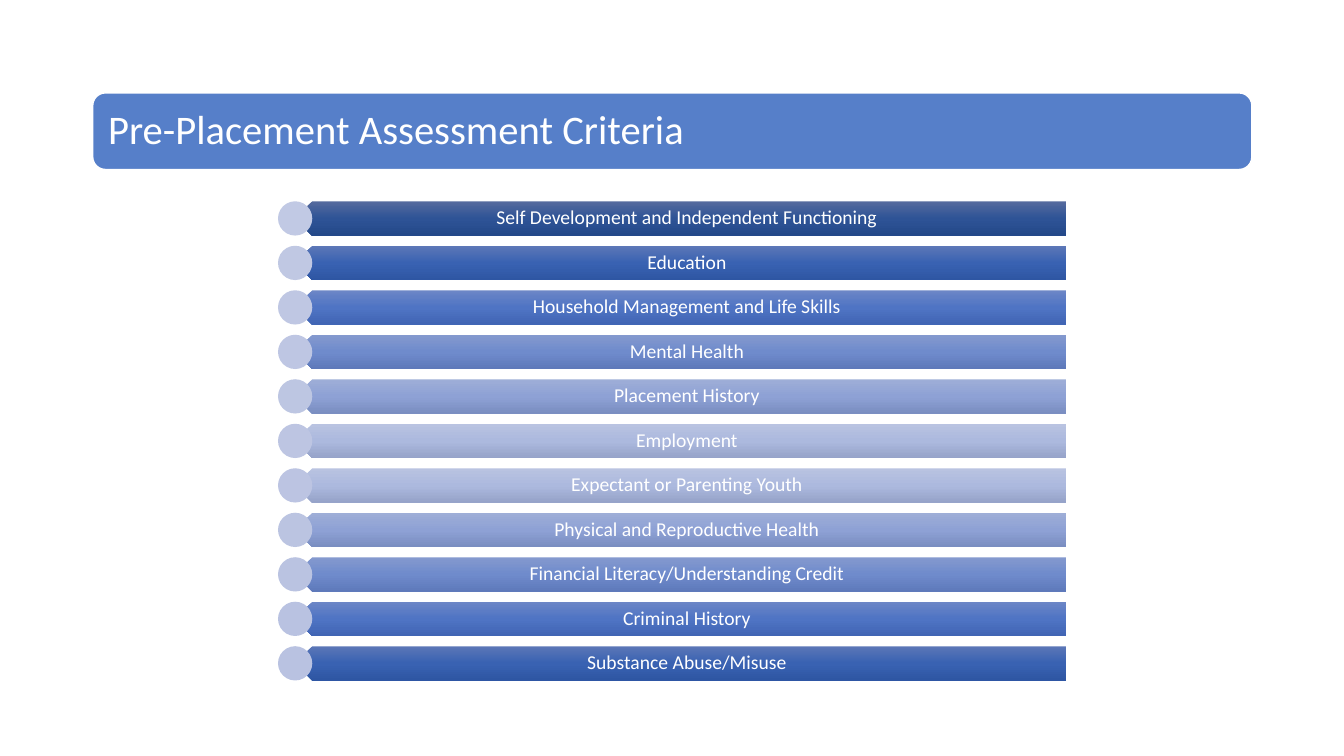
"""Build the Pre-Placement Assessment Criteria slide."""
from copy import deepcopy
from dataclasses import dataclass

from lxml.etree import SubElement
from pptx import Presentation
from pptx.dml.color import RGBColor
from pptx.enum.shapes import MSO_SHAPE
from pptx.enum.text import MSO_ANCHOR, PP_ALIGN
from pptx.oxml.ns import qn
from pptx.shapes.autoshape import Shape
from pptx.slide import Slide
from pptx.util import Pt


@dataclass(frozen=True)
class Theme:
    """Colours and type sizes of the slide."""
    font: str = "Calibri"
    heading_size: float = 29
    criterion_size: float = 14
    white: str = "FFFFFF"
    heading_fill: str = "4472C4"
    heading_opacity: int = 90
    first_disc: str = "C1C9E4"
    last_disc: str = "B9C2E1"
    bar_shades: tuple[tuple[str, str, str], ...] = (
        ("566B9E", "2E5396", "244989"),
        ("5C77B7", "3962B2", "2E56A3"),
        ("6C86C6", "4F74C4", "4165B4"),
        ("8499CE", "6F8BCC", "5E79BA"),
        ("9EAED7", "8EA1D5", "7A8EC1"),
        ("B9C3E1", "ACB9DE", "96A3C9"),
    )


@dataclass(frozen=True)
class Box:
    """A rectangle in points."""
    left: float
    top: float
    width: float
    height: float

    def lengths(self) -> tuple[Pt, Pt, Pt, Pt]:
        """Return the four lengths for a shape call."""
        return Pt(self.left), Pt(self.top), Pt(self.width), Pt(self.height)


@dataclass(frozen=True)
class Criterion:
    """One row of the list."""
    label: str
    top: float
    shades: tuple[str, str, str]
    disc_colour: RGBColor


THEME = Theme()
HEADING = Box(66.24, 66.4, 828, 54.7)
LIST_LEFT, LIST_RIGHT, LIST_TOP = 198.6, 761.4, 143.8
ROW_HEIGHT, ROW_PITCH = 24.5, 31.78
LABELS = (
    "Self Development and Independent Functioning",
    "Education",
    "Household Management and Life Skills",
    "Mental Health",
    "Placement History",
    "Employment",
    "Expectant or Parenting Youth",
    "Physical and Reproductive Health",
    "Financial Literacy/Understanding Credit",
    "Criminal History",
    "Substance Abuse/Misuse",
)


def blend(start: str, end: str, share: float) -> RGBColor:
    """Return the colour that lies the given share between two colours."""
    pairs = zip(RGBColor.from_string(start), RGBColor.from_string(end))
    return RGBColor(*(int(a + (b - a) * share) for a, b in pairs))


def list_criteria() -> list[Criterion]:
    """Give each label its place, bar shades and disc colour."""
    count = len(LABELS)
    return [
        Criterion(
            label,
            LIST_TOP + row * ROW_PITCH,
            THEME.bar_shades[min(row, count - row)],
            blend(THEME.first_disc, THEME.last_disc, row / (count - 1)),
        )
        for row, label in enumerate(LABELS)
    ]


def add_plain_shape(slide: Slide, kind: MSO_SHAPE, box: Box) -> Shape:
    """Add a preset shape without shadow or outline."""
    shape = slide.shapes.add_shape(kind, *box.lengths())
    shape.shadow.inherit = False
    shape.line.fill.background()
    return shape


def write_text(holder: Shape, text: str, size: float, align: PP_ALIGN,
               insets: tuple[float, float, float, float]) -> None:
    """Write one white line, with left, top, right and bottom insets."""
    frame = holder.text_frame
    frame.word_wrap = True
    frame.vertical_anchor = MSO_ANCHOR.MIDDLE
    frame.margin_left, frame.margin_top, frame.margin_right, frame.margin_bottom = map(Pt, insets)
    paragraph = frame.paragraphs[0]
    paragraph.alignment = align
    paragraph.line_spacing = 0.9
    run = paragraph.add_run()
    run.text = text
    run.font.name = THEME.font
    run.font.size = Pt(size)
    run.font.color.rgb = RGBColor.from_string(THEME.white)


def fill_bar(bar: Shape, shades: tuple[str, str, str]) -> None:
    """Shade a bar from top to bottom, whatever its rotation."""
    bar.fill.gradient()
    gradient = bar._element.spPr.find(qn("a:gradFill"))
    gradient.set("rotWithShape", "0")
    stop_list = gradient.find(qn("a:gsLst"))
    stop_list.insert(1, deepcopy(stop_list[0]))
    bar.fill.gradient_angle = 270
    for step, (stop, shade) in enumerate(zip(bar.fill.gradient_stops, shades)):
        stop.position = step / 2
        stop.color.rgb = RGBColor.from_string(shade)


def draw_heading(slide: Slide) -> None:
    """Draw the heading band."""
    band = add_plain_shape(slide, MSO_SHAPE.ROUNDED_RECTANGLE, HEADING)
    band.fill.solid()
    band.fill.fore_color.rgb = RGBColor.from_string(THEME.heading_fill)
    colour = band._element.spPr.find(qn("a:solidFill"))[0]
    SubElement(colour, qn("a:alpha")).set("val", str(THEME.heading_opacity * 1000))
    band.line.color.rgb = RGBColor.from_string(THEME.white)
    band.line.width = Pt(1)
    write_text(band, "Pre-Placement Assessment Criteria", THEME.heading_size,
               PP_ALIGN.LEFT, (8.4, 8.4, 8.4, 8.4))


def draw_criterion(slide: Slide, criterion: Criterion) -> None:
    """Draw one criterion as a bar, its label and a disc."""
    bar_left = LIST_LEFT + ROW_HEIGHT / 2
    label_left = bar_left + ROW_HEIGHT / 4
    bar = add_plain_shape(slide, MSO_SHAPE.PENTAGON, Box(
        bar_left, criterion.top, LIST_RIGHT - bar_left, ROW_HEIGHT))
    bar.rotation = 180
    fill_bar(bar, criterion.shades)
    label = slide.shapes.add_textbox(*Box(
        label_left, criterion.top, LIST_RIGHT - label_left, ROW_HEIGHT).lengths())
    write_text(label, criterion.label, THEME.criterion_size,
               PP_ALIGN.CENTER, (10.8, 4.2, 7.8, 4.2))
    disc = add_plain_shape(slide, MSO_SHAPE.OVAL, Box(
        LIST_LEFT, criterion.top, ROW_HEIGHT, ROW_HEIGHT))
    disc.fill.solid()
    disc.fill.fore_color.rgb = criterion.disc_colour


def main() -> None:
    """Build and save the slide."""
    presentation = Presentation()
    presentation.slide_width, presentation.slide_height = Pt(960), Pt(540)
    slide = presentation.slides.add_slide(presentation.slide_layouts[6])
    draw_heading(slide)
    for criterion in list_criteria():
        draw_criterion(slide, criterion)
    presentation.save("out.pptx")


if __name__ == "__main__":
    main()
